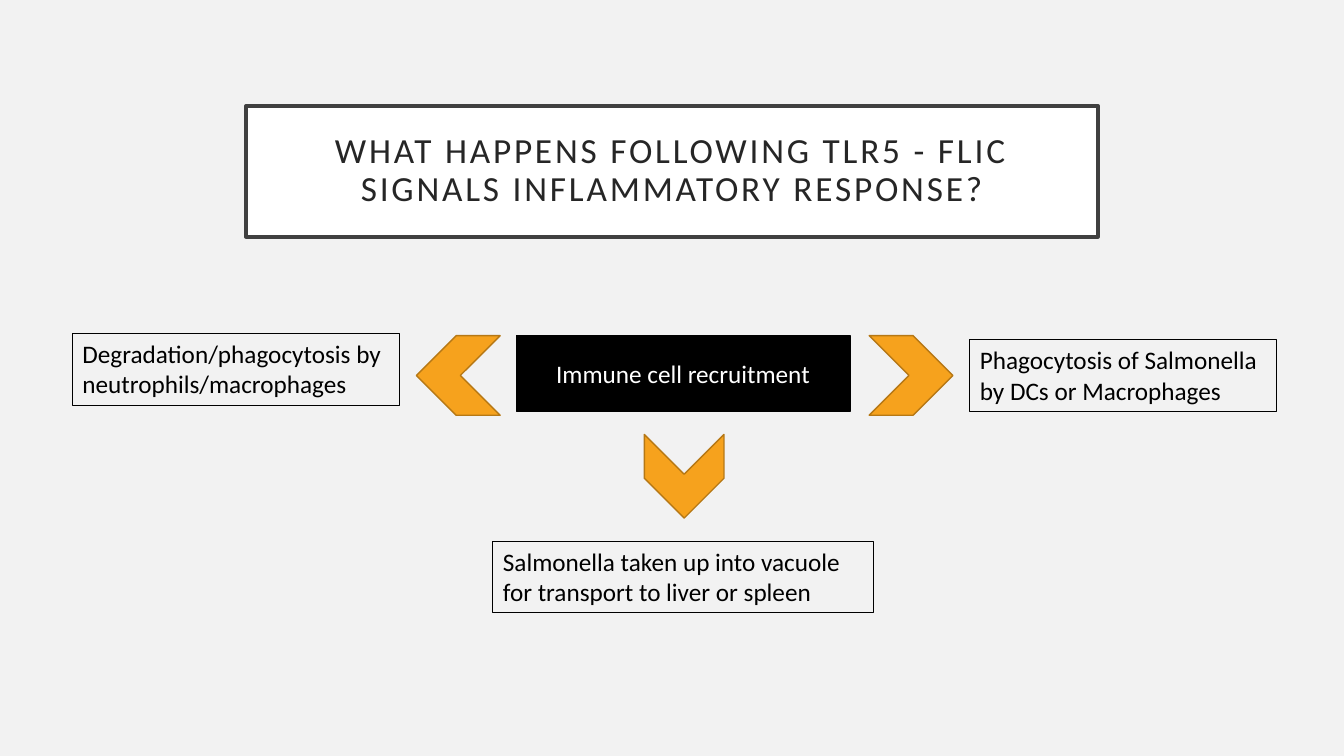
from pptx import Presentation, util as u
from pptx.dml.color import RGBColor
from pptx.enum import shapes, text

COLORS = {
    "background": "F2F2F2", "white": "FFFFFF", "black": "000000",
    "title_text": "262626", "title_line": "404040",
    "arrow": "F6A21D", "arrow_line": "B67815",
}

deck = Presentation()
deck.slide_width = u.Inches(13.33)
deck.slide_height = u.Inches(7.5)
column = deck.slide_width / 100
row = deck.slide_height / 100
page = deck.slides.add_slide(deck.slide_layouts[6])
page.background.fill.solid()
page.background.fill.fore_color.rgb = RGBColor.from_string(COLORS["background"])


def add_block(kind, left, top, width, height, fill, line, weight):
    block = page.shapes.add_shape(
        kind, round(left * column), round(top * row),
        round(width * column), round(height * row))
    block.shadow.inherit = False
    if fill:
        block.fill.solid()
        block.fill.fore_color.rgb = RGBColor.from_string(COLORS[fill])
    else:
        block.fill.background()
    block.line.color.rgb = RGBColor.from_string(COLORS[line])
    block.line.width = u.Pt(weight)
    return block


def write(box, words, size, color, align, anchor):
    frame = box.text_frame
    frame.word_wrap = True
    frame.vertical_anchor = anchor
    para = frame.paragraphs[0]
    para.alignment = align
    span = para.add_run()
    span.text = words
    span.font.name = "Calibri"
    span.font.size = u.Pt(size)
    span.font.color.rgb = RGBColor.from_string(COLORS[color])
    return para


rectangle = shapes.MSO_SHAPE.RECTANGLE
center, left_align = text.PP_ALIGN.CENTER, text.PP_ALIGN.LEFT
middle, upper = text.MSO_ANCHOR.MIDDLE, text.MSO_ANCHOR.TOP

title = add_block(rectangle, 18.3, 14, 63.4, 17.33, "white", "title_line", 2.5)
heading = write(title, "WHAT HAPPENS FOLLOWING TLR5 - FLIC SIGNALS INFLAMMATORY RESPONSE?",
                25.2, "title_text", center, middle)
heading.line_spacing = 0.9
heading.runs[0].font._element.set("spc", "200")
frame = title.text_frame
frame.margin_left = frame.margin_right = u.Inches(0.2)
frame.margin_top = frame.margin_bottom = u.Inches(0.2)

recruitment = add_block(rectangle, 38.41, 44.4, 24.83, 10, "black", "black", 1)
write(recruitment, "Immune cell recruitment", 18, "white", center, middle)

for left, top, angle in [(64.67, 44.4, 0), (47.79, 57.73, 90), (30.98, 44.4, 180)]:
    arrow = add_block(shapes.MSO_SHAPE.CHEVRON, left, top, 6.23, 10.53,
                      "arrow", "arrow_line", 1)
    arrow.rotation = angle

outcomes = [
    (72.17, 44.93, 22.81, "Phagocytosis of Salmonella by DCs or Macrophages"),
    (36.68, 71.6, 28.28, "Salmonella taken up into vacuole for transport to liver or spleen"),
    (5.4, 44.13, 24.31, "Degradation/phagocytosis by neutrophils/macrophages"),
]
for left, top, width, words in outcomes:
    outcome = add_block(rectangle, left, top, width, 9.47, None, "black", 0.75)
    write(outcome, words, 18, "black", left_align, upper)
    outcome.text_frame.auto_size = text.MSO_AUTO_SIZE.SHAPE_TO_FIT_TEXT

deck.save("out.pptx")
